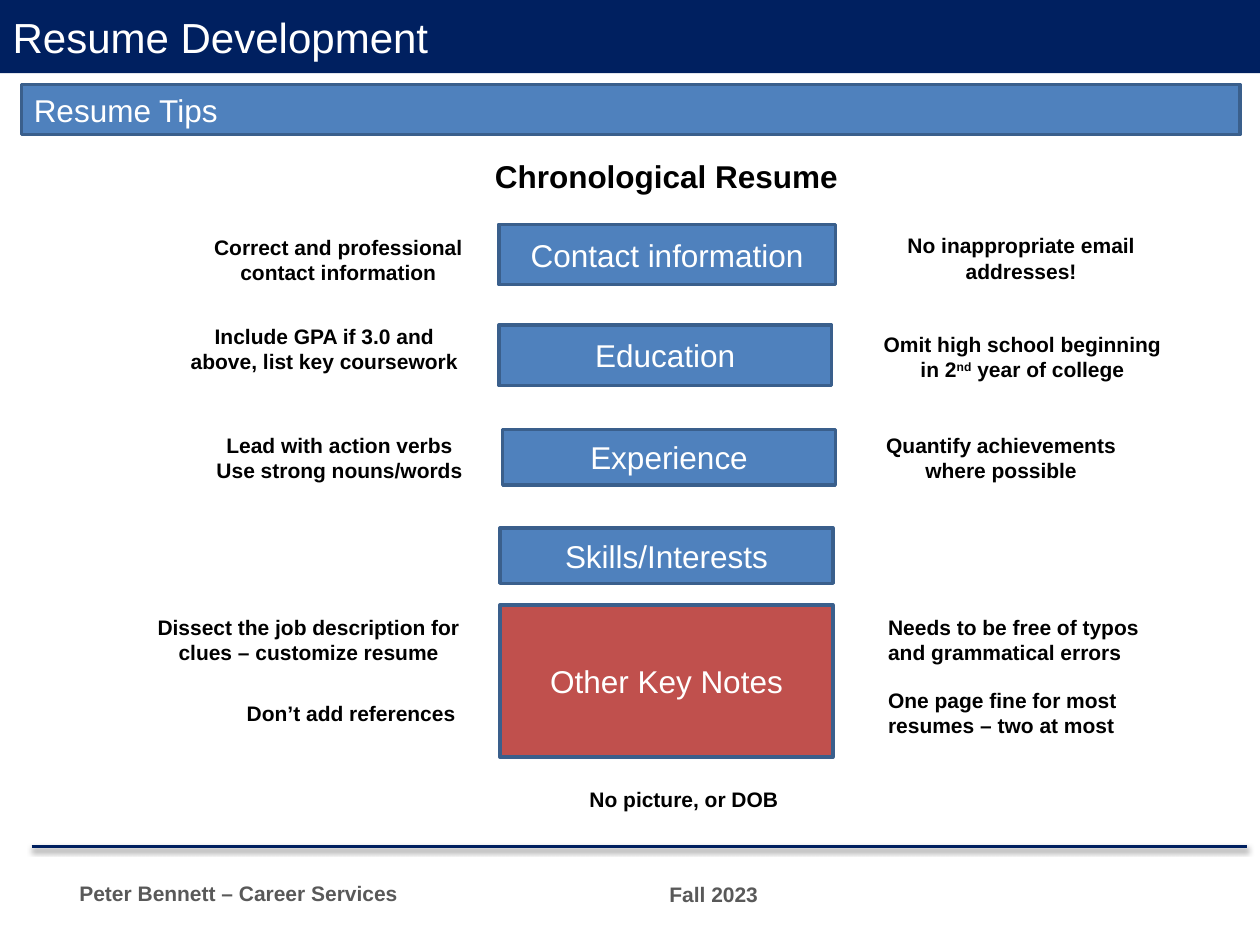
from dataclasses import dataclass

from lxml import etree
from pptx import Presentation
from pptx import util as u
from pptx.dml.color import RGBColor
from pptx.enum import shapes, text
from pptx.oxml import ns

NAVY = RGBColor(0x00, 0x20, 0x60)
BLUE = RGBColor(0x4F, 0x81, 0xBD)
EDGE = RGBColor(0x3A, 0x5F, 0x8C)
RED = RGBColor(0xC0, 0x50, 0x4D)
GRAY = RGBColor(0x59, 0x59, 0x59)
BLACK = RGBColor(0, 0, 0)
WHITE = RGBColor(255, 255, 255)
LEFT, CENTER = text.PP_ALIGN.LEFT, text.PP_ALIGN.CENTER
TOP, MIDDLE = text.MSO_ANCHOR.TOP, text.MSO_ANCHOR.MIDDLE


@dataclass
class Section:
    label: str
    left: float
    top: float
    width: float
    height: float
    fill: RGBColor = BLUE
    align: text.PP_ALIGN = CENTER


@dataclass
class Note:
    words: str
    left: float
    top: float
    width: float
    height: float = 0.5
    align: text.PP_ALIGN = CENTER
    size: int = 12
    color: RGBColor = BLACK
    anchor: text.MSO_ANCHOR = TOP
    superscript: str = ""


SECTIONS = [
    Section("Resume Tips", 0.17, 0.67, 9.67, 0.4, align=LEFT),
    Section("Contact information", 3.96, 1.78, 2.67, 0.48),
    Section("Education", 3.96, 2.58, 2.64, 0.48),
    Section("Experience", 3.99, 3.41, 2.64, 0.44),
    Section("Skills/Interests", 3.97, 4.19, 2.64, 0.44),
    Section("Other Key Notes", 3.97, 4.8, 2.64, 1.21, RED),
]

NOTES = [
    Note("Chronological Resume", 3.83, 1.2, 3, 0.4, LEFT, 18),
    Note("Correct and professional contact information", 1.54, 1.81, 2.29),
    Note("No inappropriate email addresses!", 6.89, 1.8, 2.43),
    Note("Include GPA if 3.0 and above, list key coursework", 1.36, 2.52, 2.43),
    Note("Omit high school beginning in 2nd year of college", 6.9, 2.58, 2.43,
         superscript="nd"),
    Note("Lead with action verbs\nUse strong nouns/words", 1.57, 3.38, 2.25),
    Note("Quantify achievements where possible", 6.82, 3.38, 2.25),
    Note("Dissect the job description for clues – customize resume", 1.13, 4.83, 2.64),
    Note("Needs to be free of typos and grammatical errors", 6.95, 4.83, 2.25, align=LEFT),
    Note("Don’t add references", 1.86, 5.51, 1.98, 0.3, LEFT),
    Note("One page fine for most resumes – two at most", 6.95, 5.41, 2.32, align=LEFT),
    Note("No picture, or DOB", 4.58, 6.19, 1.75, 0.3, LEFT),
    Note("Peter Bennett – Career Services", 0.31, 6.89, 3.17, 0.4,
         color=GRAY, anchor=MIDDLE),
    Note("Fall 2023", 4.08, 6.9, 3.17, 0.4, color=GRAY, anchor=MIDDLE),
]


def format_text(box, align, size: int, color: RGBColor, bold: bool, anchor) -> None:
    frame = box.text_frame
    frame.word_wrap = True
    frame.auto_size = text.MSO_AUTO_SIZE.NONE
    frame.vertical_anchor = anchor
    for para in frame.paragraphs:
        para.alignment = align
        para.font.name = "Arial"
        para.font.size = u.Pt(size)
        para.font.bold = bold
        para.font.color.rgb = color


def add_section(page, section: Section) -> None:
    box = page.shapes.add_shape(
        shapes.MSO_SHAPE.RECTANGLE, u.Inches(section.left), u.Inches(section.top),
        u.Inches(section.width), u.Inches(section.height))
    box.shadow.inherit = False
    box.fill.solid()
    box.fill.fore_color.rgb = section.fill
    box.line.color.rgb = EDGE
    box.line.width = u.Pt(2)
    box.text_frame.text = section.label
    format_text(box, section.align, 18, WHITE, False, MIDDLE)


def add_note(page, note: Note) -> None:
    box = page.shapes.add_textbox(
        u.Inches(note.left), u.Inches(note.top),
        u.Inches(note.width), u.Inches(note.height))
    if note.superscript:
        before, after = note.words.split(note.superscript, 1)
        para = box.text_frame.paragraphs[0]
        for part in (before, note.superscript, after):
            span = para.add_run()
            span.text = part
            if part == note.superscript:
                span._r.get_or_add_rPr().set("baseline", "30000")
    else:
        box.text_frame.text = note.words
    format_text(box, note.align, note.size, note.color, True, note.anchor)


def add_title(page) -> None:
    title = page.shapes.title
    title.left, title.top = u.Inches(0), u.Inches(0)
    title.width, title.height = u.Inches(10), u.Inches(0.58)
    title.fill.solid()
    title.fill.fore_color.rgb = NAVY
    title.text_frame.text = "Resume Development"
    format_text(title, LEFT, 24, WHITE, False, MIDDLE)


def add_footer_rule(page) -> None:
    rule = page.shapes.add_connector(
        shapes.MSO_CONNECTOR.STRAIGHT, u.Inches(0.25), u.Inches(6.72),
        u.Inches(9.9), u.Inches(6.72))
    rule.line.color.rgb = NAVY
    rule.line.width = u.Pt(2)
    effects = etree.SubElement(rule._element.spPr, ns.qn("a:effectLst"))
    shadow = etree.SubElement(
        effects, ns.qn("a:outerShdw"), blurRad=str(u.Pt(3.1)), dist=str(u.Pt(1.6)),
        dir="5400000", rotWithShape="0")
    color = etree.SubElement(shadow, ns.qn("a:srgbClr"), val="000000")
    etree.SubElement(color, ns.qn("a:alpha"), val="38000")


def main() -> None:
    deck = Presentation()
    deck.slide_width, deck.slide_height = u.Inches(10), u.Inches(7.5)
    page = deck.slides.add_slide(deck.slide_layouts.get_by_name("Title Only"))
    add_title(page)
    add_footer_rule(page)
    for section in SECTIONS:
        add_section(page, section)
    for note in NOTES:
        add_note(page, note)
    deck.save("out.pptx")


if __name__ == "__main__":
    main()
